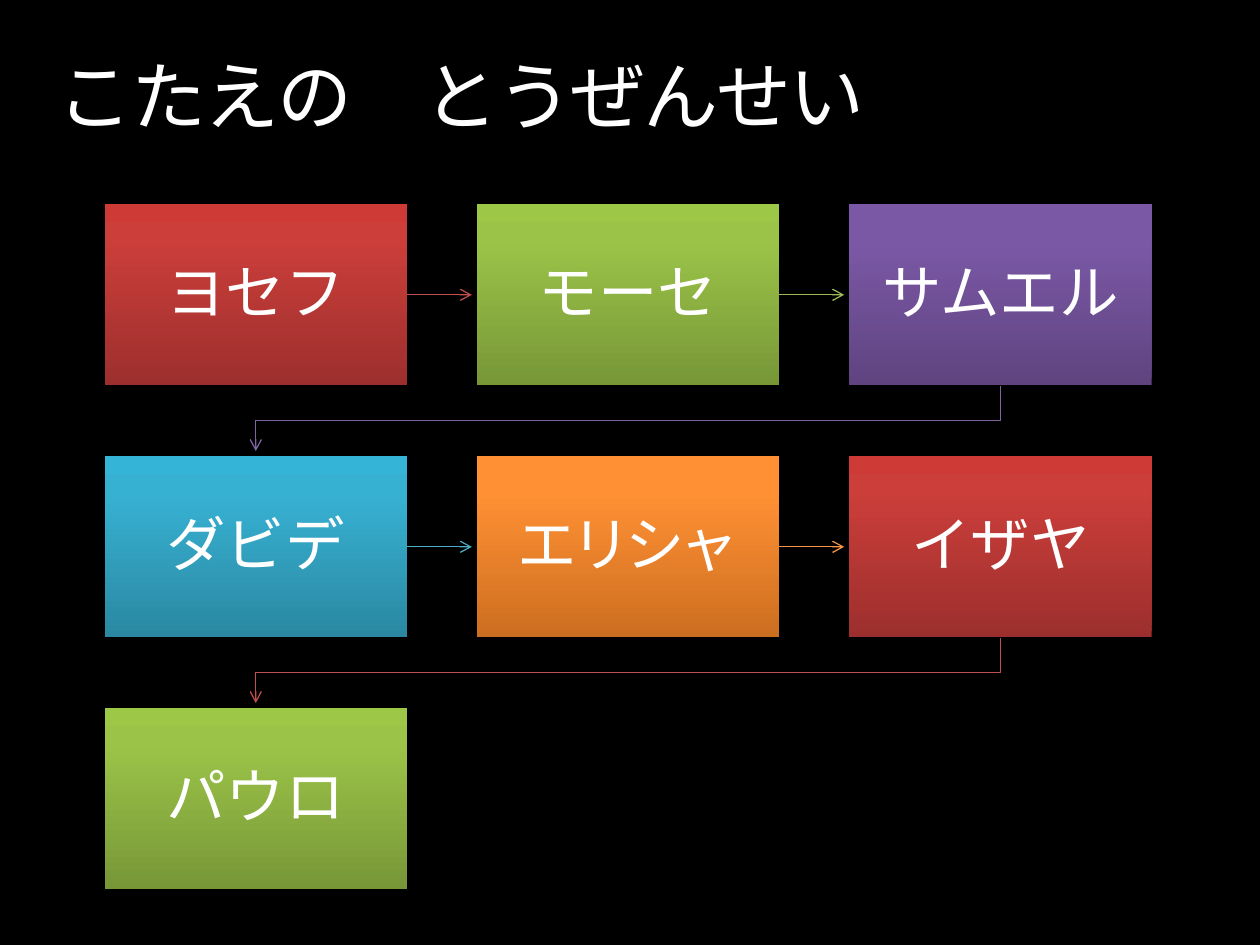
from copy import deepcopy

from lxml import etree
from pptx import Presentation
from pptx import util as u
from pptx.dml.color import RGBColor
from pptx.enum import shapes, text
from pptx.oxml import ns

BLACK = RGBColor(0x00, 0x00, 0x00)
WHITE = RGBColor(0xFF, 0xFF, 0xFF)


def palette(*codes):
    return [RGBColor.from_string(code) for code in codes]


RED = palette("C0504D", "9C2F2D", "CB3E3A", "CE3B37")
GREEN = palette("9BBB59", "779737", "9BC348", "9DC746")
PURPLE = palette("8064A2", "5F4480", "7B58A6", "7C57A8")
BLUE = palette("4BACC6", "2A88A2", "37B1D2", "34B4D6")
ORANGE = palette("F79646", "CC6E20", "FF9034", "FF9136")

NAMES = ["ヨセフ", "モーセ", "サムエル", "ダビデ", "エリシャ", "イザヤ", "パウロ"]
THEMES = [RED, GREEN, PURPLE, BLUE, ORANGE]
SPACING = {"エリシャ": -3}

COLUMNS = 3
LEFT, TOP = 0.83, 1.62
WIDTH, HEIGHT = 2.4, 1.44
COLUMN_STEP = (6.74 - LEFT) / 2
ROW_STEP = 2
ARROW_GAP = 0.04


class FlowSlide:
    title_font = "Noto Sans CJK JP"
    name_font = "Noto Sans CJK KR"
    line_width = u.Pt(0.75)

    def __init__(self, presentation):
        self.slide = presentation.slides.add_slide(presentation.slide_layouts[5])
        self.slide.background.fill.solid()
        self.slide.background.fill.fore_color.rgb = BLACK

    def style(self, paragraph, font_name, size, spacing=0):
        for run in paragraph.runs:
            run.font.name = font_name
            run.font.size = u.Pt(size)
            run.font.color.rgb = WHITE
            properties = run.font._element
            etree.SubElement(properties, ns.qn("a:ea")).set("typeface", font_name)
            if spacing:
                properties.set("spc", str(spacing * 100))

    def title(self, wording):
        heading = self.slide.shapes.title
        heading.left, heading.top = u.Inches(0.36), u.Inches(0.21)
        heading.width, heading.height = u.Inches(9.92), u.Inches(1.08)
        frame = heading.text_frame
        frame.text = wording
        frame.auto_size = text.MSO_AUTO_SIZE.NONE
        frame.vertical_anchor = text.MSO_ANCHOR.MIDDLE
        frame.paragraphs[0].alignment = text.PP_ALIGN.LEFT
        self.style(frame.paragraphs[0], self.title_font, 42.9, -1)

    def box(self, name, left, top, shades):
        card = self.slide.shapes.add_shape(
            shapes.MSO_SHAPE.RECTANGLE,
            u.Inches(left), u.Inches(top), u.Inches(WIDTH), u.Inches(HEIGHT))
        card.shadow.inherit = False
        card.line.fill.background()
        card.fill.gradient()
        card.fill.gradient_angle = 90
        stop_list = card._element.spPr.find(".//" + ns.qn("a:gsLst"))
        stop_list.append(deepcopy(stop_list[0]))
        for stop, position, shade in zip(card.fill.gradient_stops, (0, 0.8, 1), shades):
            stop.position = position
            stop.color.rgb = shade
        frame = card.text_frame
        frame.text = name
        frame.word_wrap = True
        frame.vertical_anchor = text.MSO_ANCHOR.MIDDLE
        frame.margin_left = frame.margin_right = u.Inches(0.26)
        frame.margin_top = frame.margin_bottom = u.Inches(0.26)
        paragraph = frame.paragraphs[0]
        paragraph.alignment = text.PP_ALIGN.CENTER
        paragraph.line_spacing = 0.9
        self.style(paragraph, self.name_font, 34, SPACING.get(name, 0))

    def finish_arrow(self, arrow, color):
        arrow.line.color.rgb = color
        arrow.line.width = self.line_width
        line = arrow.line._get_or_add_ln()
        etree.SubElement(line, ns.qn("a:tailEnd")).set("type", "arrow")

    def straight_arrow(self, start, end, level, color):
        arrow = self.slide.shapes.add_connector(
            shapes.MSO_CONNECTOR.STRAIGHT,
            u.Inches(start), u.Inches(level), u.Inches(end), u.Inches(level))
        self.finish_arrow(arrow, color)
        etree.SubElement(arrow._element.spPr, ns.qn("a:effectLst"))

    def return_arrow(self, points, color):
        corners = [(u.Inches(x), u.Inches(y)) for x, y in points]
        builder = self.slide.shapes.build_freeform(*corners[0])
        builder.add_line_segments(corners[1:], close=False)
        arrow = builder.convert_to_shape()
        arrow.fill.background()
        self.finish_arrow(arrow, color)
        arrow.shadow.inherit = False


def main():
    presentation = Presentation()
    presentation.slide_width = u.Inches(10)
    presentation.slide_height = u.Inches(7.5)
    flow = FlowSlide(presentation)
    flow.title("こたえの　とうぜんせい")

    for index, name in enumerate(NAMES):
        row, column = divmod(index, COLUMNS)
        left = LEFT + column * COLUMN_STEP
        top = TOP + row * ROW_STEP
        accent, *shades = THEMES[index % len(THEMES)]
        flow.box(name, left, top, shades)
        if index == len(NAMES) - 1:
            continue
        if column < COLUMNS - 1:
            flow.straight_arrow(left + WIDTH, left + COLUMN_STEP - ARROW_GAP,
                                top + HEIGHT / 2, accent)
        else:
            start, end = left + WIDTH / 2, LEFT + WIDTH / 2
            bottom, next_top = top + HEIGHT, top + ROW_STEP
            middle = (bottom + next_top) / 2
            flow.return_arrow([(start, bottom), (start, middle), (end, middle),
                               (end, next_top - ARROW_GAP)], accent)

    presentation.save("out.pptx")


if __name__ == "__main__":
    main()
